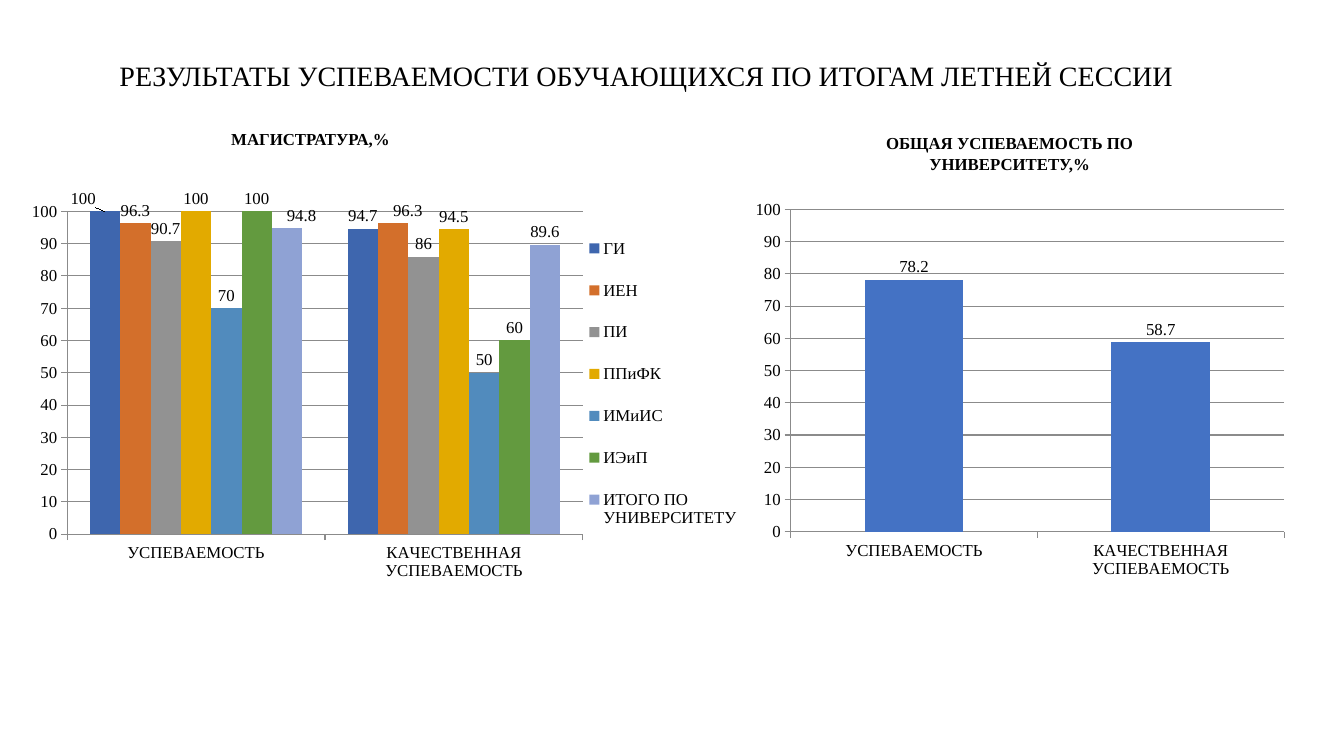
"""Build the slide with the summer session results as two column charts."""
from lxml import etree
from pptx import Presentation
from pptx import util as u
from pptx.chart.data import CategoryChartData
from pptx.dml.color import RGBColor
from pptx.enum import chart as ch, text
from pptx.oxml.ns import qn

FONT = "Times New Roman"
BLACK = RGBColor(0x00, 0x00, 0x00)
GRAY = RGBColor(0x8B, 0x8B, 0x8B)
BLUE = RGBColor(0x44, 0x72, 0xC4)
DARK_BLUE = RGBColor(0x3E, 0x66, 0xAE)
ORANGE = RGBColor(0xD3, 0x6F, 0x2B)
SILVER = RGBColor(0x92, 0x92, 0x92)
GOLD = RGBColor(0xE2, 0xAA, 0x00)
SKY = RGBColor(0x51, 0x8B, 0xBD)
GREEN = RGBColor(0x63, 0x9A, 0x3F)
LAVENDER = RGBColor(0x8F, 0xA2, 0xD4)

prs = Presentation()
prs.slide_width, prs.slide_height = u.Cm(33.87), u.Cm(19.05)
s = prs.slides.add_slide(prs.slide_layouts[6])


def add_text(content, box, size=12, bold=True, anchor=text.MSO_ANCHOR.TOP, spacing=1.0):
    tf = s.shapes.add_textbox(*map(u.Cm, box)).text_frame
    tf.word_wrap = True
    tf.vertical_anchor = anchor
    p = tf.paragraphs[0]
    p.alignment = text.PP_ALIGN.CENTER
    p.line_spacing = spacing
    r = p.add_run()
    r.text = content
    r.font.name, r.font.size, r.font.bold = FONT, u.Pt(size), bold
    r.font.color.rgb = BLACK


def add_layout(parent, index, **settings):
    layout = etree.Element(qn("c:layout"))
    manual = etree.SubElement(layout, qn("c:manualLayout"))
    for key, value in settings.items():
        etree.SubElement(manual, qn(f"c:{key}")).set("val", str(value))
    for old in parent.findall(qn("c:layout")):
        parent.remove(old)
    parent.insert(index, layout)


add_text("РЕЗУЛЬТАТЫ УСПЕВАЕМОСТИ ОБУЧАЮЩИХСЯ ПО ИТОГАМ ЛЕТНЕЙ СЕССИИ ",
         (1.19, 1.4, 30.38, 1.12), size=20, bold=False,
         anchor=text.MSO_ANCHOR.MIDDLE, spacing=0.9)
add_text("МАГИСТРАТУРА,%", (4.22, 3.12, 7.21, 0.66))
add_text("ОБЩАЯ УСПЕВАЕМОСТЬ ПО УНИВЕРСИТЕТУ,%", (21.84, 3.23, 7.21, 1.19))

masters = [
    ("ГИ", (100, 94.7), DARK_BLUE, {0: -0.03}),
    ("ИЕН", (96.3, 96.3), ORANGE, {0: 0, 1: 0.02}),
    ("ПИ", (90.7, 86), SILVER, {}),
    ("ППиФК", (100, 94.5), GOLD, {}),
    ("ИМиИС", (70, 50), SKY, {}),
    ("ИЭиП", (100, 60), GREEN, {}),
    ("ИТОГО ПО УНИВЕРСИТЕТУ", (94.8, 89.6), LAVENDER, {0: 0.02}),
]
university = [("Series 1", (78.2, 58.7), BLUE, {})]
charts = [
    (university, (18.82, 4.88, 13.82, 9.91), (0.08, 0.04, 0.9, 0.82)),
    (masters, (0.41, 4.78, 18.31, 10.21), (0.07, 0.05, 0.71, 0.8)),
]

for rows, box, (x, y, w, h) in charts:
    data = CategoryChartData()
    data.categories = ["УСПЕВАЕМОСТЬ", "КАЧЕСТВЕННАЯ УСПЕВАЕМОСТЬ"]
    for name, values, color, shifts in rows:
        data.add_series(name, values)
    chart = s.shapes.add_chart(ch.XL_CHART_TYPE.COLUMN_CLUSTERED, *map(u.Cm, box), data).chart
    chart.has_title = False
    chart.font.name, chart.font.size = FONT, u.Pt(12)
    chart.font.color.rgb = BLACK
    plot = chart.plots[0]
    plot.vary_by_categories = False
    plot.gap_width, plot.overlap = 150, 0
    add_layout(chart._chartSpace.chart.plotArea, 0, layoutTarget="inner",
               xMode="edge", yMode="edge", x=x, y=y, w=w, h=h)

    value_axis = chart.value_axis
    value_axis.minimum_scale, value_axis.maximum_scale = 0, 100
    value_axis.major_unit = 10
    value_axis.major_gridlines.format.line.color.rgb = GRAY
    for axis in (chart.category_axis, value_axis):
        axis.format.line.color.rgb = GRAY
        axis.major_tick_mark = ch.XL_TICK_MARK.OUTSIDE

    for series, (name, values, color, shifts) in zip(plot.series, rows):
        series.format.fill.solid()
        series.format.fill.fore_color.rgb = color
        labels = series.data_labels
        labels.show_value = True
        labels.position = ch.XL_LABEL_POSITION.OUTSIDE_END
        for point, shift in shifts.items():
            label = series.points[point].data_label
            label.font.size = u.Pt(12)
            label.font.name = FONT
            label.font.color.rgb = BLACK
            label.position = ch.XL_LABEL_POSITION.OUTSIDE_END
            add_layout(labels._element.findall(qn("c:dLbl"))[-1], 1, x=shift, y=0)

    chart.has_legend = len(rows) > 1
    if chart.has_legend:
        chart.legend.position = ch.XL_LEGEND_POSITION.RIGHT
        chart.legend.include_in_layout = False
        add_layout(chart.legend._element, 1, xMode="edge", yMode="edge",
                   x=0.78, y=0.06, w=0.22, h=0.83)

prs.save("out.pptx")
